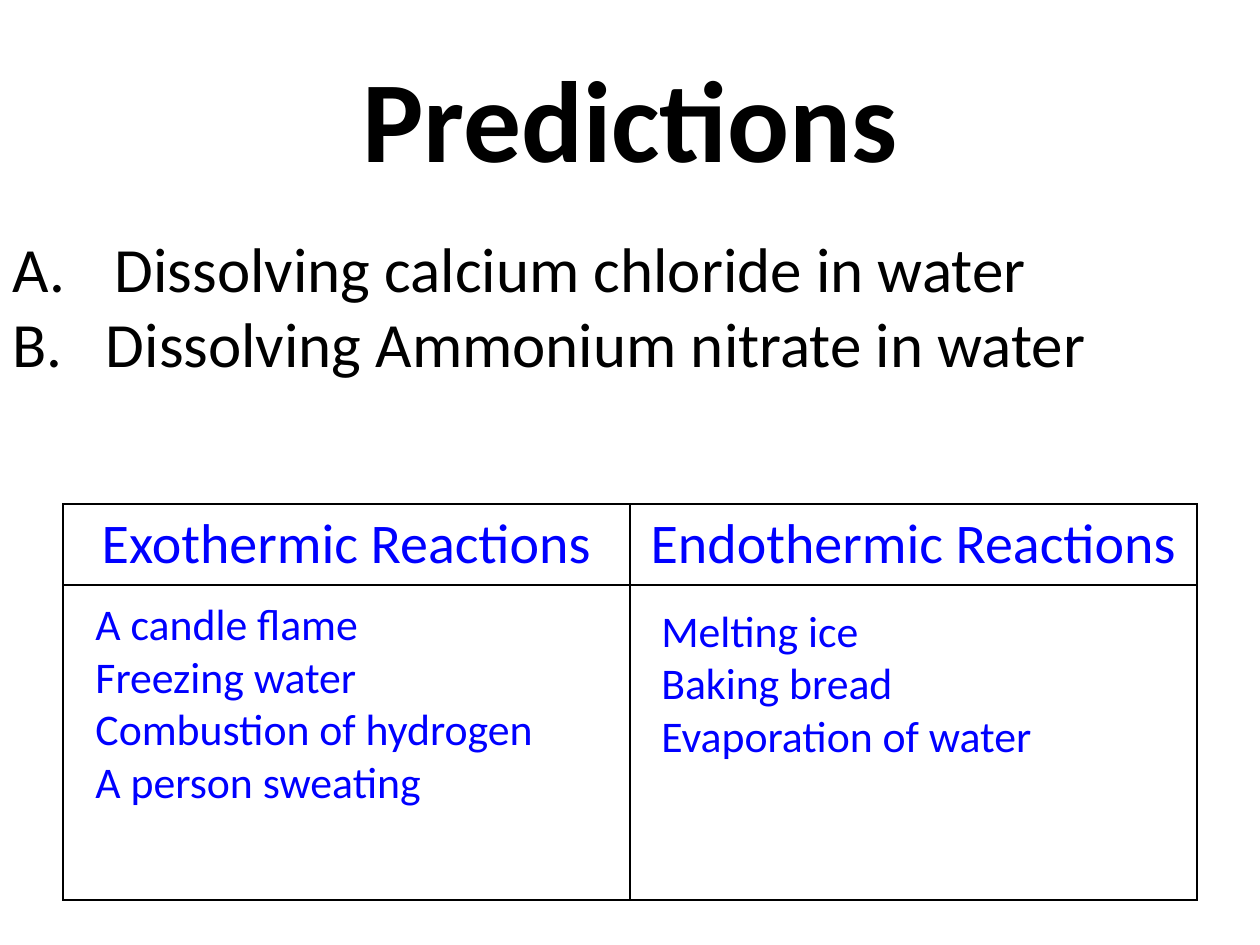
from lxml import etree
from pptx import Presentation
from pptx import util as u
from pptx.dml.color import RGBColor
from pptx.enum import text
from pptx.oxml import ns

BLACK = RGBColor(0, 0, 0)
BLUE = RGBColor(0, 0, 255)
WHITE = RGBColor(255, 255, 255)
REACTIONS = {
    "Exothermic Reactions": ["A candle flame", "Freezing water",
                             "Combustion of hydrogen", "A person sweating"],
    "Endothermic Reactions": ["Melting ice", "Baking bread", "Evaporation of water"],
}
EXPERIMENTS = [("Dissolving calcium chloride in water", 0.81),
               ("Dissolving Ammonium nitrate in water", 0.74)]


class Deck:
    font = "Calibri"
    cols, rows = 20, 15

    def __init__(self):
        self.prs = Presentation()
        self.prs.slide_width, self.prs.slide_height = u.Inches(10), u.Inches(7.5)
        self.s = self.prs.slides.add_slide(self.prs.slide_layouts[1])
        self.s.background.fill.solid()
        self.s.background.fill.fore_color.rgb = WHITE

    def box(self, col, row, width, height):
        dx, dy = self.prs.slide_width / self.cols, self.prs.slide_height / self.rows
        return int(col * dx), int(row * dy), int(width * dx), int(height * dy)

    def place(self, sp, *grid):
        sp.left, sp.top, sp.width, sp.height = self.box(*grid)
        sp.text_frame.auto_size = text.MSO_AUTO_SIZE.NONE
        return sp.text_frame

    def add_text(self, p, words, size, color, align=text.PP_ALIGN.LEFT, bold=False):
        p.alignment = align
        p.space_before = u.Pt(0)
        r = p.add_run()
        r.text = words
        r.font.name, r.font.size, r.font.bold = self.font, u.Pt(size), bold
        r.font.color.rgb = color

    def lines(self, tf, words, size, color):
        for i, line in enumerate(words):
            p = tf.add_paragraph() if i else tf.paragraphs[0]
            self.add_text(p, line, size, color)

    def title(self, words, *grid):
        tf = self.place(self.s.shapes.title, *grid)
        tf.vertical_anchor = text.MSO_ANCHOR.MIDDLE
        self.add_text(tf.paragraphs[0], words, 66, BLACK, text.PP_ALIGN.CENTER, True)

    def lettered_list(self, items, *grid):
        tf = self.place(self.s.placeholders[1], *grid)
        self.lines(tf, [words for words, _ in items], 36, BLACK)
        for i, (p, (_, indent)) in enumerate(zip(tf.paragraphs, items), 1):
            pPr = p._p.get_or_add_pPr()
            pPr.set("marL", str(u.Inches(indent)))
            pPr.set("indent", str(-u.Inches(indent)))
            etree.SubElement(pPr, ns.qn("a:buFont"), typeface="+mj-lt")
            etree.SubElement(pPr, ns.qn("a:buAutoNum"), type="alphaUcPeriod", startAt=str(i))

    def text_box(self, words, *grid):
        tf = self.s.shapes.add_textbox(*self.box(*grid)).text_frame
        tf.word_wrap = False
        tf.auto_size = text.MSO_AUTO_SIZE.SHAPE_TO_FIT_TEXT
        self.lines(tf, words, 25, BLUE)

    def border(self, cell):
        tcPr = cell._tc.get_or_add_tcPr()
        for side in "LRTB":
            ln = etree.SubElement(tcPr, ns.qn(f"a:ln{side}"), w=str(u.Pt(1)))
            fill = etree.SubElement(ln, ns.qn("a:solidFill"))
            etree.SubElement(fill, ns.qn("a:srgbClr"), val=str(BLACK))

    def table(self, headings, heights, *grid):
        frame = self.s.shapes.add_table(len(heights), len(headings), *self.box(*grid))
        tbl = frame.table
        tbl.first_row = tbl.horz_banding = False
        for row, height in zip(tbl.rows, heights):
            row.height = self.box(0, 0, 0, height)[3]
        for cell in tbl.iter_cells():
            self.border(cell)
            cell.fill.background()
        for cell, words in zip(tbl.rows[0].cells, headings):
            self.add_text(cell.text_frame.paragraphs[0], words, 32, BLUE, text.PP_ALIGN.CENTER)


def main():
    deck = Deck()
    deck.title("Predictions", 1, 0.6, 18, 2.5)
    deck.table(list(REACTIONS), [1.28, 5], 1, 8, 18, 6.28)
    exothermic, endothermic = REACTIONS.values()
    deck.text_box(exothermic, 1.32, 9.38, 7.46, 3.56)
    deck.text_box(endothermic, 10.3, 9.48, 6.42, 2.72)
    deck.lettered_list(EXPERIMENTS, 0, 3.54, 20, 2.62)
    deck.prs.save("out.pptx")


if __name__ == "__main__":
    main()
